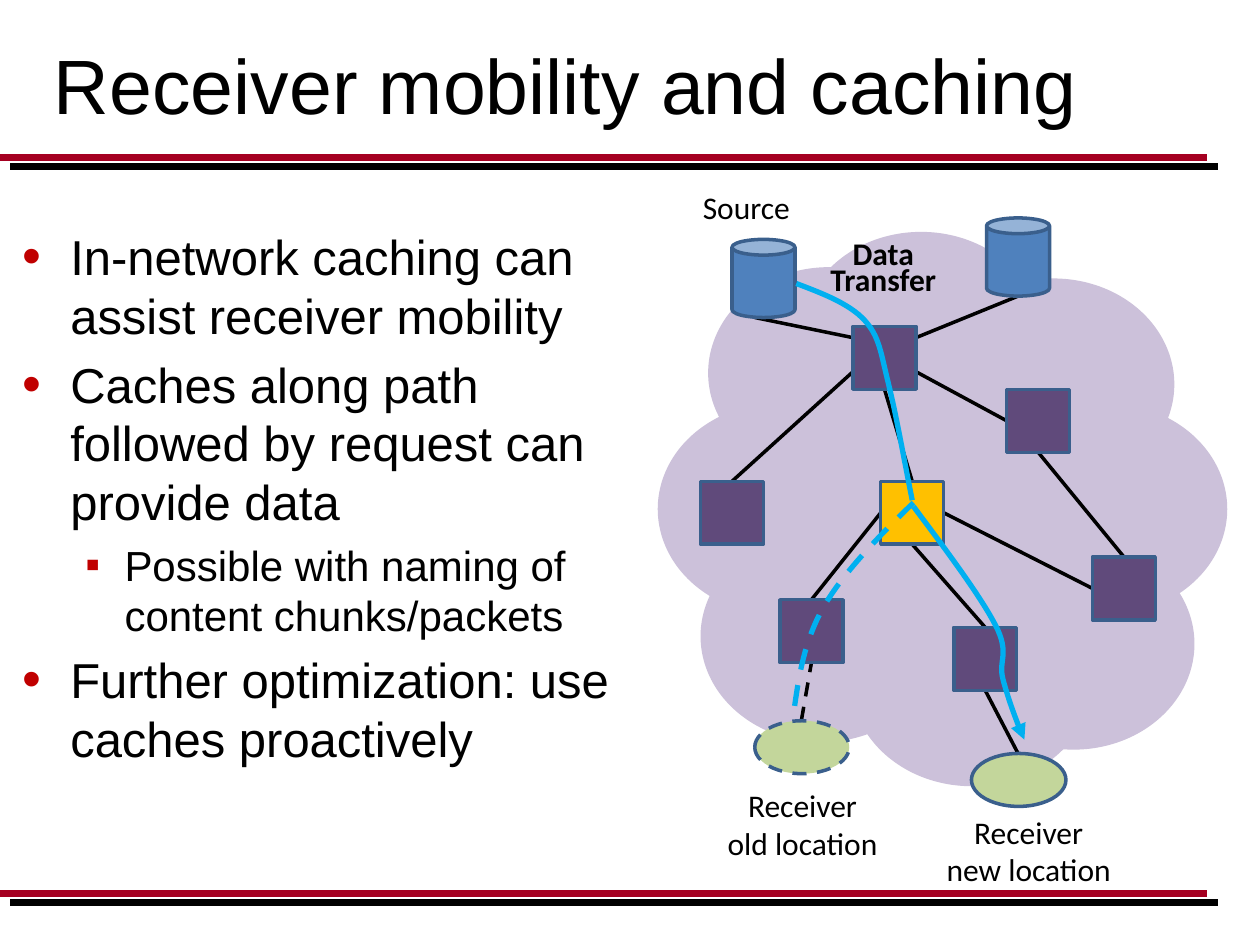
from lxml.etree import SubElement
from pptx import Presentation
from pptx.dml.color import RGBColor
from pptx.enum.dml import MSO_LINE
from pptx.enum.shapes import MSO_CONNECTOR, MSO_SHAPE
from pptx.enum.text import MSO_ANCHOR, PP_ALIGN
from pptx.oxml.ns import qn
from pptx.util import Inches, Pt

BLACK, RED, CLOUD = "000000", "A50021", "CCC1DA"
OUTLINE, ROUTER, CACHE = "3A5F8C", "604A7B", "FFC000"
SERVER, RECEIVER, FLOW = "4F81BD", "C3D69B", "00B0F0"
NODE_SIZE = 0.5

CLOUD_PUFFS = [
    (5.81, 2.74), (6.35, 1.84), (7.4, 2.21), (5.56, 4.21), (6.75, 4.56),
    (7.56, 4.27), (5.62, 2.12), (5.22, 3.2), (7.82, 3.2), (6.75, 3.26),
]
ROUTERS = [(7.57, 4.98), (6.77, 2.59), (6.19, 4.76), (8.67, 4.42), (7.99, 3.09), (5.56, 3.82)]
SERVERS = [(5.81, 1.9), (7.83, 1.73)]
LINKS = [
    ((8.08, 5.98), (7.82, 5.48)), ((5.99, 2.52), (6.77, 2.68)),
    ((7.27, 2.68), (8.08, 2.35)), ((7.24, 4.32), (7.82, 4.98)),
    ((7.27, 2.95), (7.99, 3.34)), ((8.24, 3.59), (8.92, 4.42)),
    ((7.02, 3.09), (7.24, 3.82)), ((6.44, 4.76), (6.99, 4.07)),
    ((7.49, 4.07), (8.67, 4.67)), ((5.81, 3.82), (6.77, 2.95)),
]
SOURCE_FLOW = [
    (6.32, 2.25), (6.53, 2.33), (6.74, 2.41), (6.86, 2.54), (6.98, 2.67),
    (6.99, 2.8), (7.05, 3.04), (7.11, 3.28), (7.17, 3.62), (7.24, 3.97),
]
OLD_FLOW = [
    (7.25, 3.99), (6.97, 4.26), (6.7, 4.54), (6.54, 4.81),
    (6.38, 5.09), (6.34, 5.37), (6.3, 5.65),
]
NEW_FLOW = [
    (7.25, 4.02), (7.52, 4.38), (7.78, 4.73), (7.9, 4.96), (8.02, 5.19),
    (7.92, 5.24), (7.96, 5.39), (8, 5.54), (8.06, 5.71), (8.13, 5.87),
]
BULLETS = [
    ("In-network caching can assist receiver mobility", 0),
    ("Caches along path followed by request can provide data", 0),
    ("Possible with naming of content chunks/packets", 1),
    ("Further optimization: use caches proactively", 0),
]
BULLET_LEVELS = [
    dict(size=28, margin=0.38, indent=-0.38, mark="•", scale=110),
    dict(size=24, margin=0.81, indent=-0.31, mark="▪", scale=100),
]


def color(value):
    return RGBColor.from_string(value)


def style_line(line, value, width, dashed=False):
    line.color.rgb = color(value)
    line.width = Pt(width)
    if dashed:
        line.dash_style = MSO_LINE.DASH


def add_line(page, start, end, value=BLACK, width=2, dashed=False):
    points = [Inches(number) for number in (*start, *end)]
    connector = page.shapes.add_connector(MSO_CONNECTOR.STRAIGHT, *points)
    style_line(connector.line, value, width, dashed)
    SubElement(connector._element.spPr, qn("a:effectLst"))


def add_shape(page, kind, position, size, fill, outlined=True, dashed=False):
    shape = page.shapes.add_shape(kind, *(Inches(number) for number in (*position, *size)))
    shape.shadow.inherit = False
    shape.fill.solid()
    shape.fill.fore_color.rgb = color(fill)
    if outlined:
        style_line(shape.line, OUTLINE, 2, dashed)
    else:
        shape.line.fill.background()


def curve_points(controls, steps=16):
    points = [controls[0]]
    for first in range(0, len(controls) - 1, 3):
        segment = controls[first:first + 4]
        for step in range(1, steps + 1):
            t = step / steps
            weights = ((1 - t) ** 3, 3 * t * (1 - t) ** 2, 3 * t * t * (1 - t), t ** 3)
            points.append(tuple(
                sum(weight * value for weight, value in zip(weights, axis))
                for axis in zip(*segment)
            ))
    return [(Inches(x), Inches(y)) for x, y in points]


def add_flow(page, controls, dashed=False, arrow=False):
    start, *others = curve_points(controls)
    builder = page.shapes.build_freeform(*start)
    builder.add_line_segments(others, close=False)
    flow = builder.convert_to_shape()
    flow.shadow.inherit = False
    flow.fill.background()
    style_line(flow.line, FLOW, 3, dashed)
    if arrow:
        SubElement(flow.line._get_or_add_ln(), qn("a:tailEnd"), type="triangle")


def add_box(page, left, top, width, height, anchor=MSO_ANCHOR.TOP, wrap=True):
    box = page.shapes.add_textbox(Inches(left), Inches(top), Inches(width), Inches(height))
    box.text_frame.word_wrap = wrap
    box.text_frame.vertical_anchor = anchor
    return box.text_frame


def write(para, text, size=18, font="Calibri", bold=False, align=PP_ALIGN.LEFT, spacing=None):
    para.alignment = align
    if spacing:
        para.line_spacing = Pt(spacing)
    span = para.add_run()
    span.text = text
    span.font.size = Pt(size)
    span.font.name = font
    span.font.bold = bold
    span.font.color.rgb = color(BLACK)


def set_bullet(para, margin, indent, mark, scale):
    properties = para._p.get_or_add_pPr()
    properties.set("marL", str(Inches(margin)))
    properties.set("indent", str(Inches(indent)))
    SubElement(SubElement(properties, qn("a:buClr")), qn("a:srgbClr"), val="C00000")
    SubElement(properties, qn("a:buSzPct"), val=str(scale * 1000))
    SubElement(properties, qn("a:buFont"), typeface="Arial")
    SubElement(properties, qn("a:buChar"), char=mark)


def add_bullets(page):
    frame = add_box(page, 0.08, 1.75, 5.08, 5.5)
    for number, (text, level) in enumerate(BULLETS):
        para = frame.add_paragraph() if number else frame.paragraphs[0]
        size, *marker = BULLET_LEVELS[level].values()
        para.level = level
        para.space_before = Pt(size * 0.2)
        write(para, text, size=size, font="Arial")
        set_bullet(para, *marker)


def add_label(page, lines, position, **style):
    frame = add_box(page, *position)
    for number, text in enumerate(lines):
        para = frame.add_paragraph() if number else frame.paragraphs[0]
        write(para, text, align=PP_ALIGN.CENTER, **style)


def add_rules(page):
    for y in (1.25, 7.09):
        add_line(page, (0.08, y + 0.07), (9.67, y + 0.07), width=4)
        add_line(page, (0, y), (9.58, y), RED, 4)


def add_network(page):
    for puff in CLOUD_PUFFS:
        add_shape(page, MSO_SHAPE.OVAL, puff, (1.92, 1.68), CLOUD, outlined=False)
    for start, end in LINKS:
        add_line(page, start, end)
    add_line(page, (6.36, 5.72), (6.44, 5.26), dashed=True)
    for position in ROUTERS:
        add_shape(page, MSO_SHAPE.RECTANGLE, position, (NODE_SIZE, NODE_SIZE), ROUTER)
    add_shape(page, MSO_SHAPE.RECTANGLE, (6.99, 3.82), (NODE_SIZE, NODE_SIZE), CACHE)
    for position in SERVERS:
        add_shape(page, MSO_SHAPE.CAN, position, (NODE_SIZE, 0.62), SERVER)
    for position, dashed in (((7.71, 5.98), False), ((5.99, 5.72), True)):
        add_shape(page, MSO_SHAPE.OVAL, position, (0.75, 0.42), RECEIVER, dashed=dashed)
    add_flow(page, SOURCE_FLOW)
    add_flow(page, OLD_FLOW, dashed=True)
    add_flow(page, NEW_FLOW, arrow=True)


def main():
    deck = Presentation()
    deck.slide_width, deck.slide_height = Inches(10), Inches(7.5)
    page = deck.slides.add_slide(deck.slide_layouts[6])
    add_rules(page)
    title = add_box(page, 0.33, 0, 9.17, 1.33, anchor=MSO_ANCHOR.MIDDLE)
    write(title.paragraphs[0], "Receiver mobility and caching", size=44, font="Arial")
    add_bullets(page)
    add_network(page)
    source = add_box(page, 5.48, 1.44, 0.9, 0.4, wrap=False)
    write(source.paragraphs[0], "Source")
    add_label(page, ["Receiver", "new location"], (7.35, 6.4, 1.63, 0.71))
    add_label(page, ["Receiver", "old location"], (5.62, 6.19, 1.5, 0.71))
    add_label(page, ["Data Transfer"], (6.32, 1.9, 1.38, 0.52), bold=True, spacing=15)
    deck.save("out.pptx")


if __name__ == "__main__":
    main()
